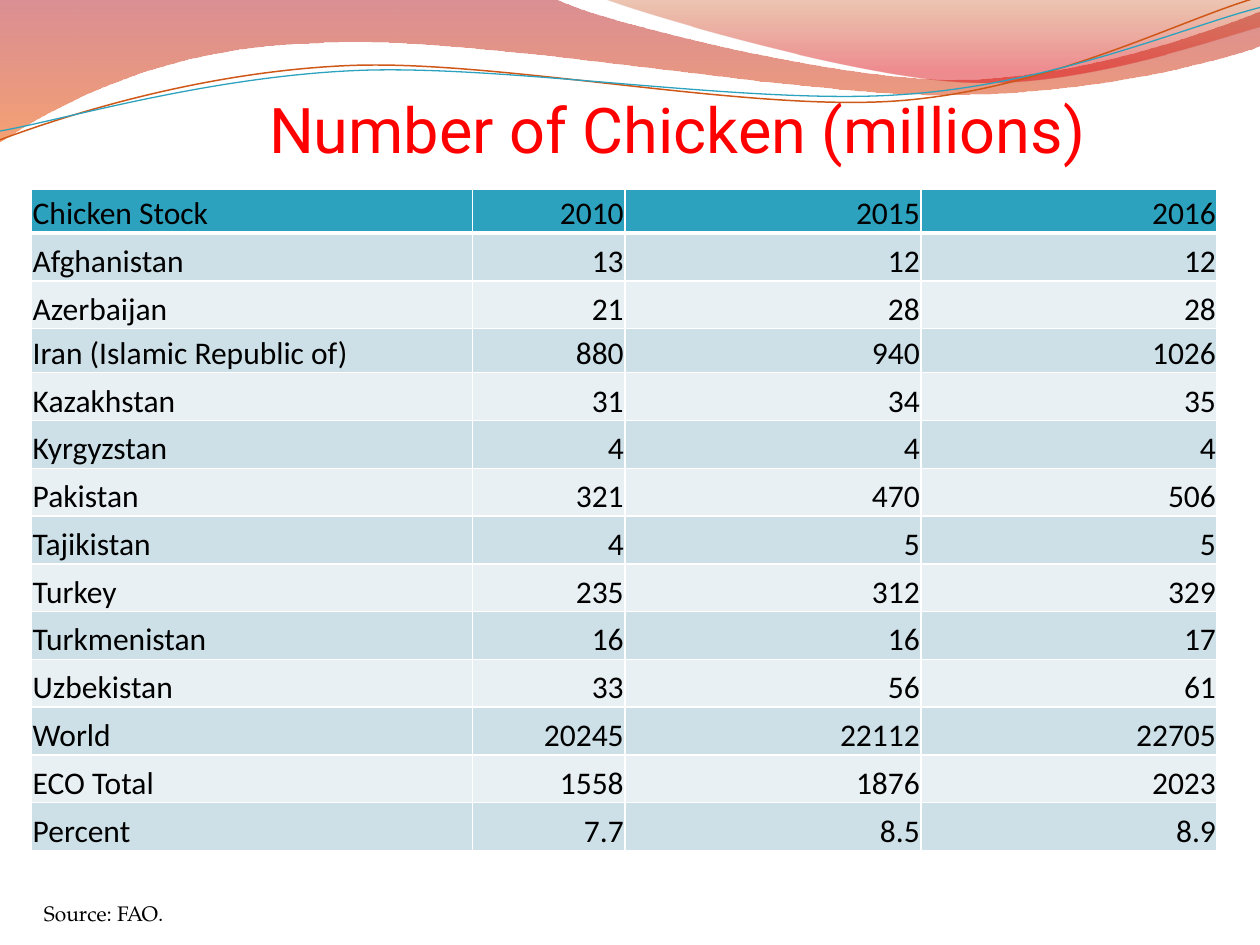
"""Builds the slide on chicken stock in the ECO countries."""
import math

import lxml.etree
import pptx
import pptx.dml.color
import pptx.enum.text
import pptx.oxml.ns
import pptx.util

Inches = pptx.util.Inches
Pt = pptx.util.Pt
qn = pptx.oxml.ns.qn
ALIGN = pptx.enum.text.PP_ALIGN
ANCHOR = pptx.enum.text.MSO_ANCHOR

COLORS = {
    "title": "FF0000", "text": "000000", "header": "2DA2BF",
    "odd_row": "CDE0E8", "even_row": "E8F0F4", "border": "FFFFFF",
    "wine": "AF0911", "orange": "EE5300", "rust": "C24400",
    "crimson": "DC000B", "copper_line": "CF5818", "teal_line": "2DA2BF",
}

STOCK = [
    ("Chicken Stock", "2010", "2015", "2016"),
    ("Afghanistan", "13", "12", "12"),
    ("Azerbaijan", "21", "28", "28"),
    ("Iran (Islamic Republic of)", "880", "940", "1026"),
    ("Kazakhstan", "31", "34", "35"),
    ("Kyrgyzstan", "4", "4", "4"),
    ("Pakistan", "321", "470", "506"),
    ("Tajikistan", "4", "5", "5"),
    ("Turkey", "235", "312", "329"),
    ("Turkmenistan", "16", "16", "17"),
    ("Uzbekistan", "33", "56", "61"),
    ("World", "20245", "22112", "22705"),
    ("ECO Total", "1558", "1876", "2023"),
    ("Percent", "7.7", "8.5", "8.9"),
]

BROAD_WAVE = [
    (0, 0), (4.4, -0.01),
    (4.76, 0.17, 6.64, 0.63, 7.58, 0.63), (8.53, 0.63, 9.58, 0.26, 10, 0.09),
    (10.01, 0.36),
    (9.83, 0.44, 8.7, 0.76, 7.46, 0.75), (6.22, 0.75, 3.82, 0.28, 2.57, 0.34),
    (1.29, 0.36, 0.46, 0.83, -0.01, 1.13), (0, 0),
]
RIGHT_WAVE = [
    (4.79, -0.01),
    (5.09, 0.11, 6.82, 0.62, 7.69, 0.65), (8.56, 0.69, 9.61, 0.32, 10, 0.21),
    (10, 0), (4.79, -0.01),
]
COPPER_CURVE = [
    (0, 1.11), (0.48, 0.93, 1.58, 0.57, 2.77, 0.52),
    (3.95, 0.47, 5.93, 0.89, 7.13, 0.8), (8.33, 0.71, 9.38, 0.15, 9.98, -0.02),
]
TEAL_CURVE = [
    (0, 1.04), (0.47, 0.96, 1.64, 0.61, 2.83, 0.56),
    (4.03, 0.51, 5.97, 0.84, 7.17, 0.75), (8.36, 0.67, 9.41, 0.21, 10, 0.06),
]


def rgb(name):
    """Return the named colour."""
    return pptx.dml.color.RGBColor.from_string(COLORS[name])


def write(frame, text, font="Calibri", size=18, color="text", align=ALIGN.LEFT):
    """Put one formatted line of text into a text frame."""
    paragraph = frame.paragraphs[0]
    paragraph.alignment = align
    run = paragraph.add_run()
    run.text = text
    run.font.name = font
    run.font.size = Pt(size)
    run.font.bold = False
    run.font.color.rgb = rgb(color)


def turn(point, center, degrees):
    """Turn a point clockwise about a center."""
    angle = math.radians(degrees)
    dx, dy = point[0] - center[0], point[1] - center[1]
    return (center[0] + dx * math.cos(angle) - dy * math.sin(angle),
            center[1] + dx * math.sin(angle) + dy * math.cos(angle))


class Deck:
    """Holds the style and the current slide."""

    def __init__(self, slide):
        """Keep the slide to draw on."""
        self.slide = slide

    def outline(self, segments, closed, center=(0, 0), tilt=0):
        """Draw an outline of straight and cubic segments."""
        points = [turn(segment[i:i + 2], center, -tilt)
                  for segment in segments for i in range(0, len(segment), 2)]
        points = [(Inches(x), Inches(y)) for x, y in points]
        builder = self.slide.shapes.build_freeform(*points[0])
        builder.add_line_segments(points[1:], close=closed)
        shape = builder.convert_to_shape()
        shape.shadow.inherit = False
        shape.rotation = tilt % 360
        steps = iter(list(shape.element.spPr.iter(qn("a:lnTo"))))
        for segment in segments[1:]:
            step = next(steps)
            if len(segment) == 6:
                step.addprevious(bezier := step.makeelement(qn("a:cubicBezTo")))
                for part in (step, next(steps), next(steps)):
                    bezier.append(part[0])
                    part.getparent().remove(part)
        return shape

    def wave(self, segments, stops):
        """Draw a wave with a translucent downward gradient."""
        shape = self.outline(segments, True)
        shape.line.fill.background()
        shape.fill.gradient()
        shape.fill.gradient_angle = 270
        for stop, (position, color, _) in zip(shape.fill.gradient_stops, stops):
            stop.position = position
            stop.color.rgb = rgb(color)
        tints = shape.element.spPr.iter(qn("a:srgbClr"))
        for tint, (_, _, opacity) in zip(list(tints), stops):
            lxml.etree.SubElement(tint, qn("a:alpha"), val=str(opacity * 1000))

    def curve(self, segments, color, width, center):
        """Draw an open, slightly tilted curved line."""
        shape = self.outline(segments, False, center, -2.7)
        shape.fill.background()
        shape.line.color.rgb = rgb(color)
        shape.line.width = Pt(width)

    def text(self, box, text, wrap=True, **style):
        """Add a text box."""
        frame = self.slide.shapes.add_textbox(*map(Inches, box)).text_frame
        frame.word_wrap = wrap
        write(frame, text, **style)

    def border(self, cell, side, width):
        """Add a solid border to one side of a cell."""
        line = lxml.etree.SubElement(
            cell._tc.get_or_add_tcPr(), qn("a:ln" + side), w=str(Pt(width)))
        fill = lxml.etree.SubElement(line, qn("a:solidFill"))
        lxml.etree.SubElement(fill, qn("a:srgbClr"), val=COLORS["border"])

    def cell(self, cell, text, row, column):
        """Format and fill one table cell."""
        cell.vertical_anchor = ANCHOR.BOTTOM
        cell.margin_left = cell.margin_right = cell.margin_top = Inches(0.01)
        cell.margin_bottom = 0
        widths = {"L": 1, "R": 1, "T": 3 if row == 1 else 1, "B": 3 if row == 0 else 1}
        for side, width in widths.items():
            self.border(cell, side, width)
        band = "header" if row == 0 else "odd_row" if row % 2 else "even_row"
        cell.fill.solid()
        cell.fill.fore_color.rgb = rgb(band)
        write(cell.text_frame, text, align=ALIGN.RIGHT if column else ALIGN.LEFT)

    def table(self, box, rows, widths, heights):
        """Add a banded table."""
        table = self.slide.shapes.add_table(
            len(rows), len(widths), *map(Inches, box)).table
        for column, width in zip(table.columns, widths):
            column.width = Inches(width)
        for row, height in zip(table.rows, heights):
            row.height = Inches(height)
        for r, values in enumerate(rows):
            for c, value in enumerate(values):
                self.cell(table.cell(r, c), value, r, c)


def main():
    """Build and save the slide."""
    presentation = pptx.Presentation()
    presentation.slide_width, presentation.slide_height = Inches(10), Inches(7.5)
    deck = Deck(presentation.slides.add_slide(presentation.slide_layouts[6]))
    deck.wave(BROAD_WAVE, [(0, "wine", 45), (1, "orange", 55)])
    deck.wave(RIGHT_WAVE, [(0, "rust", 30), (0.8, "crimson", 45)])
    deck.curve(COPPER_CURVE, "copper_line", 0.85, (4.99, 0.57))
    deck.curve(TEAL_CURVE, "teal_line", 0.75, (5, 0.59))
    deck.text((0.75, 0.67, 9.25, 1.25), "Number of Chicken (millions)",
              font="Roboto", size=36, color="title", align=ALIGN.CENTER)
    deck.text((0.25, 7.1, 1.18, 0.3), "Source: FAO.", wrap=False,
              font="TeX Gyre Pagella", size=12)
    low, total = 0.35, 5.25
    tall = (total - 2 * low) / (len(STOCK) - 2)
    heights = [low if row in (0, 3) else tall for row in range(len(STOCK))]
    deck.table((0.25, 1.5, 9.42, total), STOCK, (3.5, 1.21, 2.35, 2.35), heights)
    presentation.save("out.pptx")


if __name__ == "__main__":
    main()
